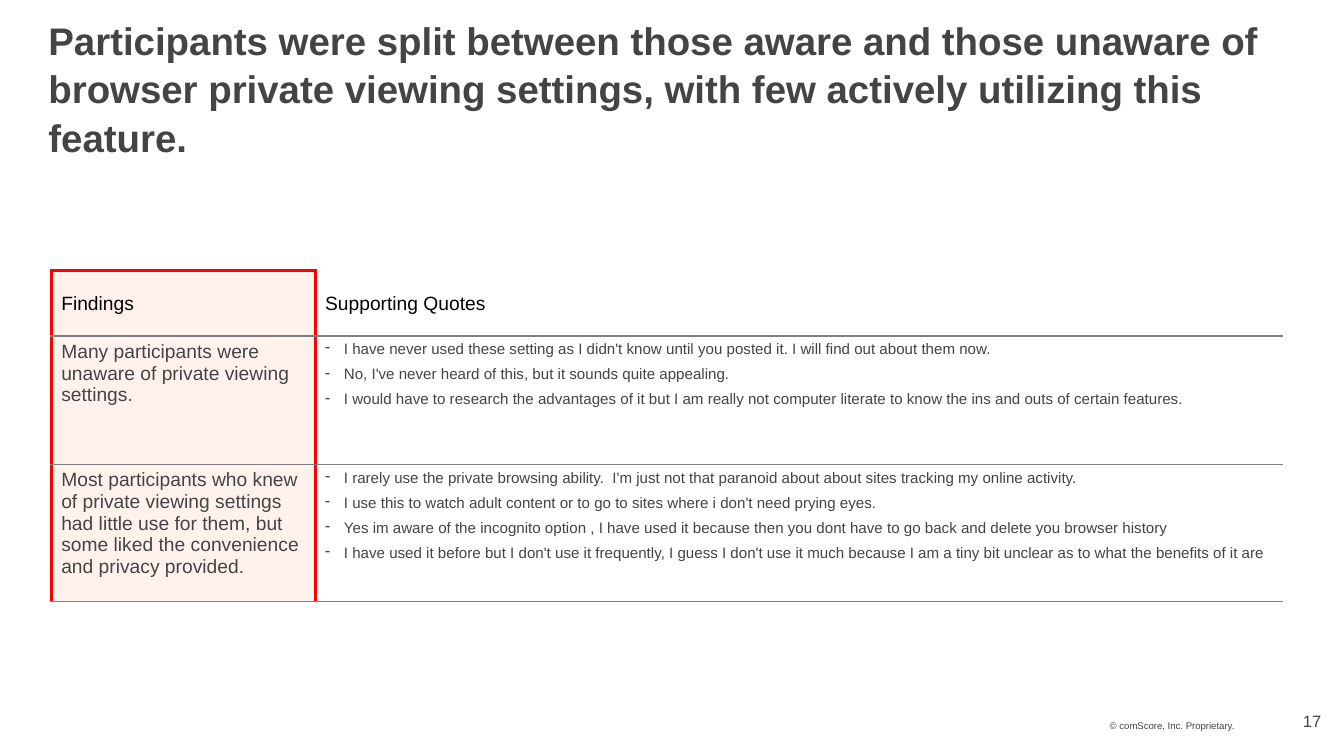
"""Build a slide of findings and supporting quotes on private viewing settings."""
from lxml import etree
from pptx import Presentation
from pptx import util as u
from pptx.dml.color import RGBColor
from pptx.enum import text
from pptx.oxml import ns

COLORS = {"body": "444444", "header": "000000", "accent": "FF0000",
          "rule": "808080", "tint": "FFCFB8"}
ACCENT = ("accent", 2.25)
RULE = ("rule", 1)
HEADERS = ("Findings", "Supporting Quotes")
FINDINGS = (
    ("Many participants were unaware of private viewing settings.",
     ("I have never used these setting as I didn't know until you posted it. I will find out about them now.",
      "No, I've never heard of this, but it sounds quite appealing.",
      "I would have to research the advantages of it but I am really not computer literate to know "
      "the ins and outs of certain features.")),
    ("Most participants who knew of private viewing settings had little use for them, but some liked "
     "the convenience and privacy provided.",
     ("I rarely use the private browsing ability.  I'm just not that paranoid about about sites "
      "tracking my online activity.",
      "I use this to watch adult content or to go to sites where i don't need prying eyes.",
      "Yes im aware of the incognito option , I have used it because then you dont have to go back "
      "and delete you browser history",
      "I have used it before but I don't use it frequently, I guess I don't use it much because I am "
      "a tiny bit unclear as to what the benefits of it are")),
)


def add_xml(parent, tag, **attributes):
    """Append a drawing element to the parent."""
    element = etree.SubElement(parent, ns.qn(f"a:{tag}"))
    for name, value in attributes.items():
        element.set(name, str(value))
    return element


def write_lines(frame, lines, size, color="body", bold=False, bullet=None, **formats):
    """Write one formatted paragraph for each line."""
    for index, line in enumerate(lines):
        paragraph = frame.add_paragraph() if index else frame.paragraphs[0]
        if bullet:
            properties = paragraph._p.get_or_add_pPr()
            indent = u.Inches(0.19)
            properties.set("marL", str(indent))
            properties.set("indent", str(-indent))
            add_xml(properties, "buChar", char=bullet)
        for name, value in formats.items():
            setattr(paragraph, name, value)
        run = paragraph.add_run()
        run.text = line
        font_formats = {"name": "Arial", "size": u.Pt(size), "bold": bold}
        for name, value in font_formats.items():
            setattr(run.font, name, value)
        run.font.color.rgb = RGBColor.from_string(COLORS[color])


def add_text(slide, box, line, size, margins, anchor=text.MSO_ANCHOR.TOP, **formats):
    """Add a wrapped text box with one paragraph."""
    frame = slide.shapes.add_textbox(*map(u.Inches, box)).text_frame
    side, top, bottom = map(u.Inches, margins)
    frame_formats = {"word_wrap": True, "vertical_anchor": anchor, "margin_left": side,
                     "margin_right": side, "margin_top": top, "margin_bottom": bottom}
    for name, value in frame_formats.items():
        setattr(frame, name, value)
    write_lines(frame, [line], size, **formats)


def style_cell(cell, borders, tinted):
    """Draw the cell borders and its fill."""
    properties = cell._tc.get_or_add_tcPr()
    for side in "LRTB":
        color, width = borders.get(side, (None, 0))
        line = add_xml(properties, f"ln{side}", w=int(u.Pt(width)))
        if color:
            add_xml(add_xml(line, "solidFill"), "srgbClr", val=COLORS[color])
        else:
            add_xml(line, "noFill")
    if tinted:
        fill = add_xml(add_xml(properties, "solidFill"), "srgbClr", val=COLORS["tint"])
        add_xml(fill, "alpha", val=25000)
    else:
        add_xml(properties, "noFill")


def add_findings_table(slide):
    """Add the table that pairs each finding with its quotes."""
    box = map(u.Inches, (0.52, 2.74, 12.46, 3.35))
    table = slide.shapes.add_table(len(FINDINGS) + 1, len(HEADERS), *box).table
    table.first_row = table.horz_banding = False
    for column, width in zip(table.columns, (2.67, 9.79)):
        column.width = u.Inches(width)
    for row, height in zip(table.rows, (0.66, 1.3, 1.39)):
        row.height = u.Inches(height)

    for column, header in enumerate(HEADERS):
        cell = table.cell(0, column)
        cell.vertical_anchor = text.MSO_ANCHOR.MIDDLE
        write_lines(cell.text_frame, [header], 14, color="header")
    for row, (finding, quotes) in enumerate(FINDINGS, 1):
        write_lines(table.cell(row, 0).text_frame, [finding], 14, space_after=u.Pt(12))
        write_lines(table.cell(row, 1).text_frame, quotes, 11, bullet="-", space_after=u.Pt(6))

    for row in range(len(table.rows)):
        top = {"T": RULE} if row else {}
        finding_top = RULE if row else ACCENT
        style_cell(table.cell(row, 0), {"L": ACCENT, "R": ACCENT, "T": finding_top, "B": RULE}, True)
        style_cell(table.cell(row, 1), {"L": ACCENT, "B": RULE, **top}, False)


def main():
    """Build and save the slide."""
    presentation = Presentation()
    presentation.slide_width = u.Inches(13.6)
    presentation.slide_height = u.Inches(7.65)
    slide = presentation.slides.add_slide(presentation.slide_layouts[6])
    bottom = text.MSO_ANCHOR.BOTTOM
    add_text(slide, (11.23, 6.95, 1.5, 0.51), "© comScore, Inc. Proprietary.", 7,
             (0, 0.06, 0.06), bottom, line_spacing=u.Pt(7.9))
    add_text(slide, (12.52, 7.06, 1.09, 0.4), "17", 12,
             (0.24, 0.06, 0.06), bottom, alignment=text.PP_ALIGN.RIGHT)
    add_findings_table(slide)
    add_text(slide, (0.37, 0.15, 13, 1.15),
             "Participants were split between those aware and those unaware of browser private "
             "viewing settings, with few actively utilizing this feature.", 28,
             (0.12, 0, 0.06), bold=True, line_spacing=1.05)
    presentation.save("out.pptx")


if __name__ == "__main__":
    main()
